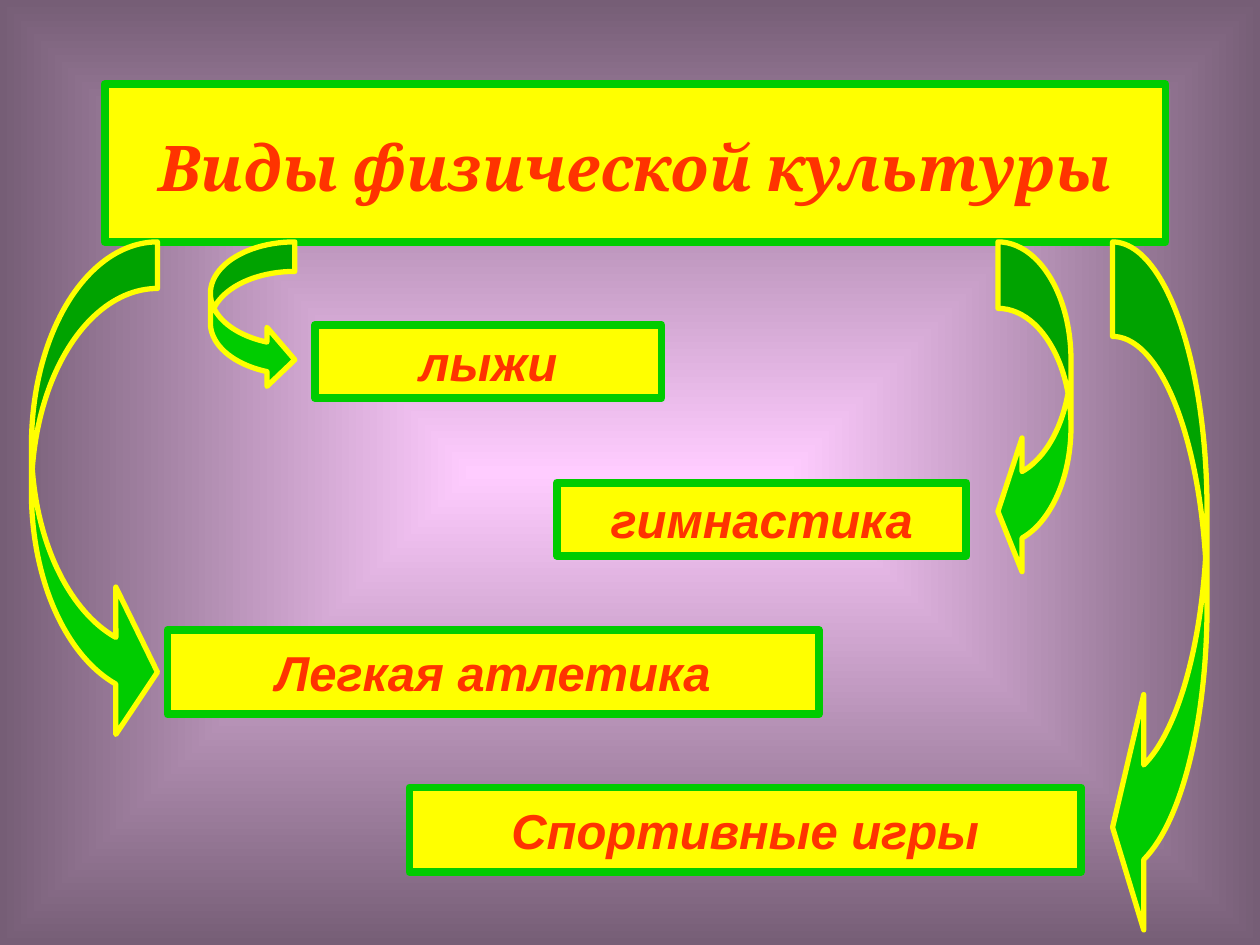
import pptx
import pptx.dml.color
import pptx.enum.shapes
import pptx.enum.text
import pptx.oxml.ns
import pptx.util
from lxml import etree

Inches = pptx.util.Inches
RGB = pptx.dml.color.RGBColor
KIND = pptx.enum.shapes.MSO_SHAPE
qn = pptx.oxml.ns.qn

YELLOW = RGB(0xFF, 0xFF, 0x00)
GREEN = RGB(0x00, 0xCC, 0x00)
RED = RGB(0xFF, 0x33, 0x00)
PINK = RGB(0xFF, 0xCC, 0xFF)
PLUM = RGB(0x76, 0x5E, 0x76)

BOXES = [
    ("лыжи", (2.5, 2.58, 2.75, 0.58)),
    ("Спортивные игры", (3.25, 6.25, 5.33, 0.67)),
    ("Легкая атлетика", (1.33, 5, 5.17, 0.67)),
    ("гимнастика", (4.42, 3.83, 3.25, 0.58)),
]
TITLE = [("Виды физической", 36), (" ", 40), ("культуры", 36)]
TOP = 1.92  # all arrows start at the lower edge of the title
ARROWS = [
    # kind, left, width, height, body and head proportions
    (KIND.CURVED_RIGHT_ARROW, 1.67, 0.67, 1.17, (0.35, 0.7)),
    (KIND.CURVED_RIGHT_ARROW, 0.25, 1, 4, (0.37, 1.17)),
    (KIND.CURVED_LEFT_ARROW, 8.83, 0.75, 5.58, (1, 2.49)),
    (KIND.CURVED_LEFT_ARROW, 7.92, 0.58, 2.67, (0.91, 1.83)),
]


def paint(slide):
    """Fill the background with a gradient that spreads from the centre."""
    fill = slide.background.fill
    fill.gradient()
    for stop, color in zip(fill.gradient_stops, (PINK, PLUM)):
        stop.color.rgb = color
    grad = next(slide.element.iter(qn("a:gradFill")))
    grad.remove(grad.find(qn("a:lin")))
    glow = etree.SubElement(grad, qn("a:path"))
    glow.set("path", "shape")
    focus = etree.SubElement(glow, qn("a:fillToRect"))
    for side in "ltrb":
        focus.set(side, "50000")


def add_shape(slide, kind, at, fill, line, width):
    shape = slide.shapes.add_shape(kind, *map(Inches, at))
    shape.shadow.inherit = False
    shape.fill.solid()
    shape.fill.fore_color.rgb = fill
    shape.line.color.rgb = line
    shape.line.width = pptx.util.Pt(width)
    return shape


def write(shape, runs, font="Arial", color=RED):
    """Set one centred line from (text, size) runs."""
    frame = shape.text_frame
    frame.word_wrap = False
    frame.vertical_anchor = pptx.enum.text.MSO_ANCHOR.MIDDLE
    para = frame.paragraphs[0]
    para.alignment = pptx.enum.text.PP_ALIGN.CENTER
    for text, size in runs:
        run = para.add_run()
        run.text = text
        run.font.name = font
        run.font.size = pptx.util.Pt(size)
        run.font.bold = run.font.italic = True
        run.font.color.rgb = color


def add_box(slide, at, runs, **style):
    box = add_shape(slide, KIND.RECTANGLE, at, YELLOW, GREEN, 4.5)
    write(box, runs, **style)


def add_arrow(slide, kind, left, width, height, ratios):
    arrow = add_shape(slide, kind, (left, TOP, width, height), GREEN, YELLOW, 3)
    for i, ratio in enumerate((*ratios, 0.33)):
        arrow.adjustments[i] = ratio


def main():
    deck = pptx.Presentation()
    deck.slide_width, deck.slide_height = Inches(10), Inches(7.5)
    slide = deck.slides.add_slide(deck.slide_layouts[6])
    paint(slide)
    for text, at in BOXES:
        add_box(slide, at, [(text, 28)])
    add_box(slide, (0.83, 0.67, 8.42, 1.25), TITLE, font="Cambria")
    for arrow in ARROWS:
        add_arrow(slide, *arrow)
    deck.save("out.pptx")


if __name__ == "__main__":
    main()
